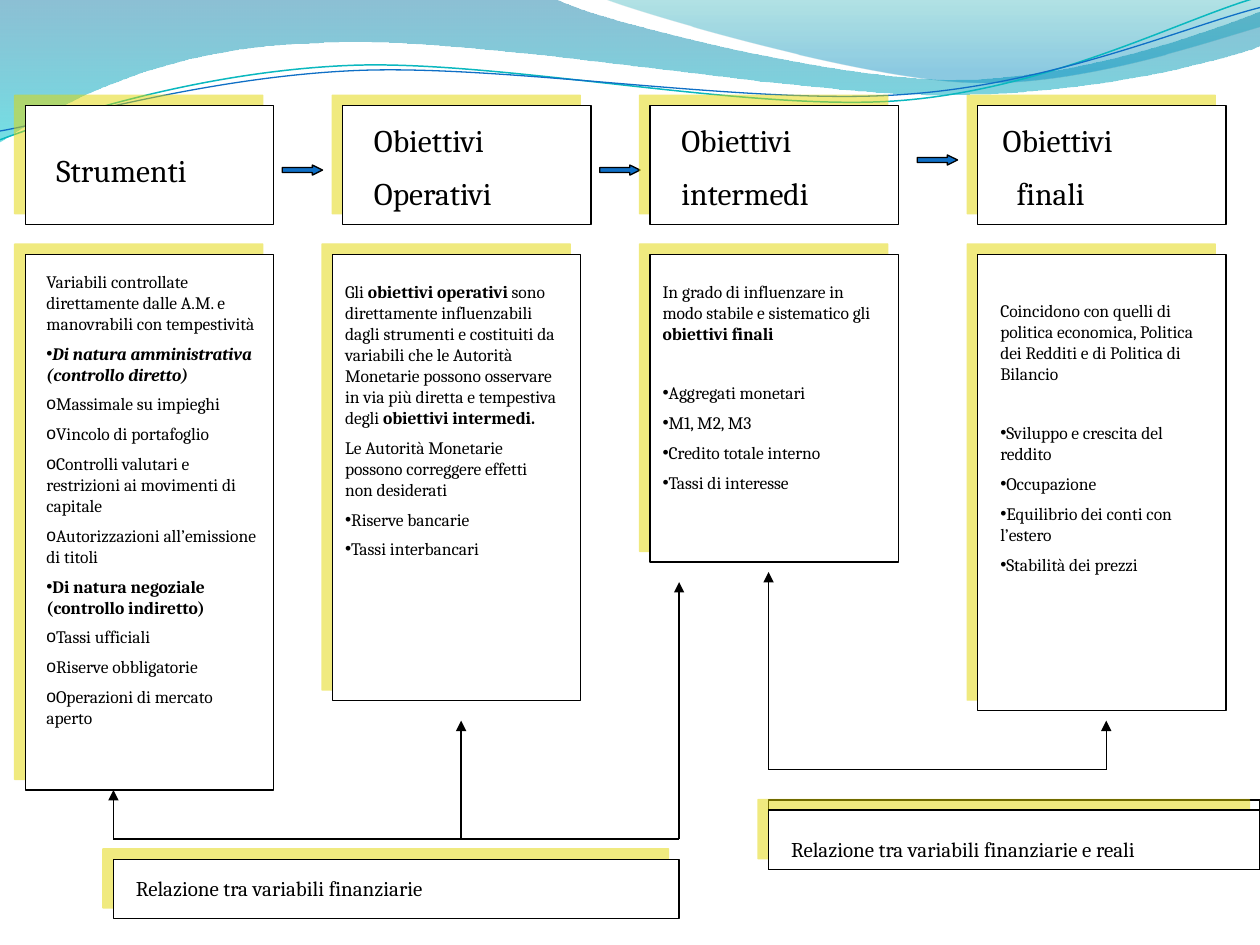
from dataclasses import dataclass

import pptx
import pptx.dml.color
import pptx.enum.shapes
import pptx.enum.text
import pptx.oxml
import pptx.oxml.ns
import pptx.util

Inches, Pt = pptx.util.Inches, pptx.util.Pt
RGB = pptx.dml.color.RGBColor.from_string
SHAPE = pptx.enum.shapes.MSO_SHAPE
qn = pptx.oxml.ns.qn


@dataclass(frozen=True)
class Theme:
    font: str = "Cambria"
    bullet_font: str = "Arial"
    ink: str = "000000"
    paper: str = "FFFFFF"
    accent: str = "0F6FC6"
    teal: str = "0AB8BF"
    shadow: str = "E2D700"
    back_wave: tuple = ((0, "0074A1", 45), (1, "00C6CF", 55))
    front_wave: tuple = ((0, "00A1A9", 30), (0.8, "008BBF", 45))
    heading: int = 18
    caption: int = 12
    body: int = 10
    line: float = 0.75


@dataclass
class Para:
    runs: list  # (text, style) pairs; style holds "b" and/or "i"
    bullet: str = ""
    gap: float = 0.5  # space before, in multiples of the type size
    indent: float = 0


def para(text, style="", **options):
    return Para([(text, style)], **options)


def bullets(char, *texts, style="", first_gap=0.5):
    return [para(text, style, bullet=char, gap=0.5 if i else first_gap)
            for i, text in enumerate(texts)]


def add_xml(parent, tag, **attrs):
    el = pptx.oxml.parse_xml(f"<a:{tag} {pptx.oxml.ns.nsdecls('a')}/>")
    for name, value in attrs.items():
        el.set(name, str(value))
    parent.append(el)
    return el


class Deck:
    def __init__(self, theme):
        self.theme = theme
        self.prs = pptx.Presentation()
        self.prs.slide_width, self.prs.slide_height = Inches(10), Inches(7.5)
        self.slide = self.prs.slides.add_slide(self.prs.slide_layouts[6])

    def stroke(self, line, color=None, width=None):
        line.color.rgb = RGB(color or self.theme.ink)
        line.width = Pt(width or self.theme.line)

    def wave(self, start, segments, gradient=None, color=None, width=None):
        """Put on the master an outline of one-point (straight) or three-point (Bézier) segments."""
        builder = self.slide.shapes.build_freeform(
            *(Inches(v) for v in start), scale=1.0)
        builder.add_line_segments(
            [(Inches(x), Inches(y)) for seg in segments for x, y in seg],
            close=bool(gradient))
        sp = builder.convert_to_shape()
        steps = iter(list(sp._element.iter(qn("a:lnTo"))))
        for seg in segments:
            group = [next(steps) for _ in seg]
            if len(group) == 3:
                curve = add_xml(group[0].getparent(), "cubicBezTo")
                group[0].addprevious(curve)
                for step in group:
                    curve.append(step[0])
                    step.getparent().remove(step)
        sp.shadow.inherit = False
        if gradient:
            self.wash(sp, gradient)
        else:
            sp.fill.background()
            self.stroke(sp.line, color, width)
        self.prs.slide_master.shapes._spTree.append(sp._element)

    def wash(self, sp, gradient):
        """Fill with a downward gradient of (position, colour, opacity) stops."""
        sp.line.fill.background()
        sp.fill.gradient()
        sp.fill.gradient_angle = 270
        for stop, (position, rgb, _) in zip(sp.fill.gradient_stops, gradient):
            stop.position, stop.color.rgb = position, RGB(rgb)
        colors = sp._element.spPr.iter(qn("a:srgbClr"))
        for clr, (_, _, opacity) in zip(colors, gradient):
            add_xml(clr, "alpha", val=opacity * 1000)

    def shape(self, kind, x, y, w, h, fill):
        sp = self.slide.shapes.add_shape(kind, *(Inches(v) for v in (x, y, w, h)))
        sp.shadow.inherit = False
        sp.fill.solid()
        sp.fill.fore_color.rgb = RGB(fill)
        self.stroke(sp.line)
        return sp

    def box(self, x, y, w, h, shadow=True):
        sp = self.shape(SHAPE.RECTANGLE, x, y, w, h, self.theme.paper)
        if shadow:
            effects = sp._element.spPr.find(qn("a:effectLst"))
            outer = add_xml(effects, "outerShdw", dist=Pt(8.5), dir=225 * 60000,
                            algn="ctr", rotWithShape=0)
            clr = add_xml(outer, "srgbClr", val=self.theme.shadow)
            add_xml(clr, "alpha", val=50000)

    def block_arrow(self, x, y):
        sp = self.shape(SHAPE.RIGHT_ARROW, x, y, 0.32, 0.08, self.theme.accent)
        sp.adjustments[1] = 1.01

    def line(self, x1, y1, x2, y2, arrow=False):
        cn = self.slide.shapes.add_connector(
            pptx.enum.shapes.MSO_CONNECTOR.STRAIGHT,
            *(Inches(v) for v in (x1, y1, x2, y2)))
        self.stroke(cn.line)
        if arrow:
            add_xml(cn.line._get_or_add_ln(), "tailEnd", type="triangle")
        add_xml(cn._element.spPr, "effectLst")

    def bracket(self, base, tips):
        """Draw a horizontal line at base with an arrow up to each (x, y) tip."""
        for x, y in tips:
            self.line(x, base, x, y, arrow=True)
        self.line(tips[0][0], base, tips[-1][0], base)

    def text(self, x, y, w, h, size, paras):
        tf = self.slide.shapes.add_textbox(
            *(Inches(v) for v in (x, y, w, h))).text_frame
        tf.word_wrap = True
        tf.auto_size = pptx.enum.text.MSO_AUTO_SIZE.SHAPE_TO_FIT_TEXT
        for i, item in enumerate(paras):
            p = tf.add_paragraph() if i else tf.paragraphs[0]
            p.space_before = Pt(size * item.gap)
            pPr = p._p.get_or_add_pPr()
            pPr.set("marL", str(Inches(item.indent)))
            pPr.set("indent", "0")
            if item.bullet:
                add_xml(pPr, "buFont", typeface=self.theme.bullet_font)
                add_xml(pPr, "buChar", char=item.bullet)
            for content, style in item.runs:
                r = p.add_run()
                r.text = content
                formats = {"name": self.theme.font, "size": Pt(size),
                           "bold": "b" in style, "italic": "i" in style}
                for name, value in formats.items():
                    setattr(r.font, name, value)
                r.font.color.rgb = RGB(self.theme.ink)


INSTRUMENTS = [
    para("Variabili controllate direttamente dalle A.M. e manovrabili con tempestività"),
    *bullets("•", "Di natura amministrativa (controllo diretto)", style="bi"),
    *bullets("o", "Massimale su impieghi", "Vincolo di portafoglio",
             "Controlli valutari e restrizioni ai movimenti di capitale",
             "Autorizzazioni all’emissione di titoli"),
    *bullets("•", "Di natura negoziale (controllo indiretto)", style="b"),
    *bullets("o", "Tassi ufficiali", "Riserve obbligatorie", "Operazioni di mercato aperto")]
OPERATING = [
    Para([("Gli ", ""), ("obiettivi operativi", "b"),
          (" sono direttamente influenzabili dagli strumenti e costituiti da variabili "
           "che le Autorità Monetarie possono osservare in via più diretta e tempestiva "
           "degli ", ""), ("obiettivi intermedi.", "b")]),
    para("Le Autorità Monetarie possono correggere effetti non desiderati"),
    *bullets("•", "Riserve bancarie", "Tassi interbancari")]
INTERMEDIATE = [
    Para([("In grado di influenzare in modo stabile e sistematico gli ", ""),
          ("obiettivi finali", "b")]),
    *bullets("•", "Aggregati monetari", "M1, M2, M3", "Credito totale interno",
             "Tassi di interesse", first_gap=2.2)]
FINAL = [
    para("Coincidono con quelli di politica economica, Politica dei Redditi e di "
         "Politica di Bilancio"),
    *bullets("•", "Sviluppo e crescita del reddito", "Occupazione",
             "Equilibrio dei conti con l’estero", "Stabilità dei prezzi", first_gap=2.2)]

# heading box x, heading text (x, y, w, h), heading, body box (x, h), body text, body
COLUMNS = [
    (0.2, (0.35, 1.15, 1.57, 0.4), [para("Strumenti")],
     (0.2, 4.25), (0.27, 2.1, 1.89, 4.02), INSTRUMENTS),
    (2.72, (2.87, 0.91, 1.73, 0.85), [para("Obiettivi"), para("Operativi")],
     (2.64, 3.54), (2.64, 2.18, 1.89, 2.52), OPERATING),
    (5.16, (5.31, 0.91, 1.73, 0.85), [para("Obiettivi"), para("intermedi")],
     (5.16, 2.44), (5.16, 2.18, 1.89, 1.85), INTERMEDIATE),
    (7.76, (7.76, 0.91, 1.73, 0.85),
     [para("Obiettivi", indent=0.1), para("finali", indent=0.21)],
     (7.76, 3.62), (7.84, 2.33, 1.81, 2.35), FINAL)]


def main():
    theme = Theme()
    deck = Deck(theme)
    deck.wave((0, 0), [
        [(4.4, -0.01)], [(4.76, 0.17), (6.64, 0.63), (7.58, 0.63)],
        [(8.53, 0.63), (9.58, 0.26), (10, 0.09)], [(10.01, 0.36)],
        [(9.83, 0.44), (8.7, 0.76), (7.46, 0.75)],
        [(6.22, 0.75), (3.82, 0.28), (2.57, 0.34)],
        [(1.29, 0.36), (0.46, 0.83), (-0.01, 1.13)]], gradient=theme.back_wave)
    deck.wave((4.79, -0.01), [
        [(5.09, 0.11), (6.82, 0.62), (7.69, 0.65)],
        [(8.56, 0.69), (9.61, 0.32), (10, 0.21)], [(10, 0)]], gradient=theme.front_wave)
    deck.wave((0, 1.11), [
        [(0.48, 0.93), (1.58, 0.57), (2.77, 0.52)],
        [(3.95, 0.47), (5.93, 0.89), (7.13, 0.8)],
        [(8.33, 0.71), (9.38, 0.15), (9.98, -0.02)]], color=theme.teal, width=0.85)
    deck.wave((0, 1.04), [
        [(0.47, 0.96), (1.64, 0.61), (2.83, 0.56)],
        [(4.03, 0.51), (5.97, 0.84), (7.17, 0.75)],
        [(8.36, 0.67), (9.41, 0.21), (10, 0.06)]], color=theme.accent)

    for x, y in ((2.24, 1.31), (4.76, 1.31), (7.28, 1.23)):
        deck.block_arrow(x, y)
    deck.bracket(6.11, [(6.1, 4.54), (8.78, 5.72)])
    deck.bracket(6.66, [(0.9, 6.27), (3.66, 5.72), (5.39, 4.62)])

    for head_x, head_at, heading, (body_x, body_h), body_at, body in COLUMNS:
        deck.box(head_x, 0.84, 1.97, 0.94)
        deck.box(body_x, 2.02, 1.97, body_h)
        deck.text(*head_at, theme.heading, heading)
        deck.text(*body_at, theme.body, body)

    deck.box(6.1, 6.35, 3.9, 0.55, shadow=False)
    deck.box(0.9, 6.82, 4.49, 0.47)
    deck.box(6.1, 6.43, 3.9, 0.47)
    deck.text(6.18, 6.59, 3.55, 0.3, theme.caption,
              [para("Relazione tra variabili finanziarie e reali")])
    deck.text(0.98, 6.9, 4.17, 0.3, theme.caption,
              [para("Relazione tra variabili finanziarie")])
    deck.prs.save("out.pptx")


if __name__ == "__main__":
    main()
